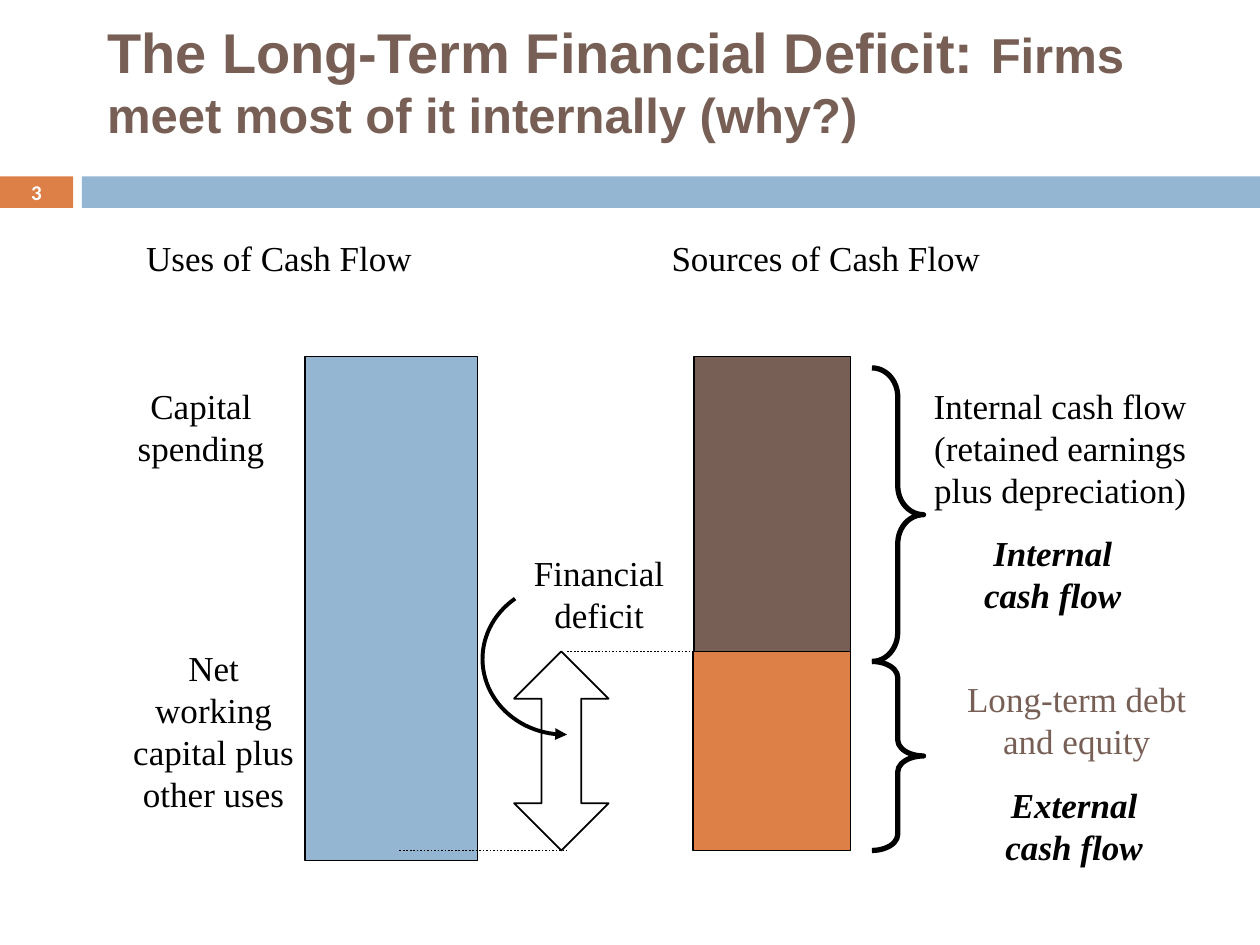
import math

import pptx
import pptx.dml.color
import pptx.enum.dml
import pptx.enum.shapes
import pptx.enum.text
import pptx.oxml
import pptx.oxml.ns
import pptx.util

Inches = pptx.util.Inches
Pt = pptx.util.Pt
SHAPES = pptx.enum.shapes.MSO_SHAPE
ANCHOR = pptx.enum.text.MSO_ANCHOR

COLORS = {"black": "000000", "white": "FFFFFF", "blue": "94B6D2",
          "orange": "DD8047", "brown": "775F55"}

# Content; boxes are left, top, width, height in inches
TITLE_RUNS = [("The Long-Term Financial Deficit: ", 32),
              ("Firms meet most of it internally (why?)", 28)]
HEADER_BARS = [((0, 1.4, 0.58, 0.25), "orange"), ((0.65, 1.4, 9.35, 0.25), "blue")]
CASH_BARS = [
    ((2.42, 2.83, 1.37, 4), "blue"),
    ((5.51, 2.83, 1.24, 2.41), "brown"),
    ((5.5, 5.17, 1.25, 1.58), "orange"),
]
BRACES = [((6.92, 2.92, 0.41, 2.33), 0.56), ((6.92, 5.25, 0.41, 1.5), 0.31)]
LABELS = [
    ("Uses of Cash Flow", (1, 1.83, 2.43, 0.44), "black"),
    ("Sources of Cash Flow", (5.17, 1.83, 2.77, 0.44), "black"),
    ("Capital spending", (0.92, 3, 1.35, 0.77), "black"),
    ("Net working capital plus other uses", (0.92, 5.08, 1.55, 1.45), "black"),
    ("Internal cash flow (retained earnings plus depreciation)",
     (7.25, 3, 2.33, 1.11), "black"),
    ("Long-term debt and equity", (7.42, 5.33, 2.25, 0.77), "brown"),
    ("Financial deficit", (4.08, 4.33, 1.35, 0.77), "black"),
]
EMPHASIZED_LABELS = [
    ("Internal cash flow", (7.58, 4.17, 1.55, 0.77), "black"),
    ("External cash flow", (7.75, 6.17, 1.55, 0.77), "black"),
]
DEFICIT_ARROW = (4.08, 5.17, 0.75, 1.58)
DOTTED_LINES = [(3.17, 4.5, 6.75), (4.5, 6, 5.17)]  # from x, to x, y
POINTER_CENTER, POINTER_RADII = (4.48, 5.23), (0.65, 0.6)
POINTER_ANGLES = (233, 90)  # degrees, clockwise from the right


def rgb(name):
    return pptx.dml.color.RGBColor.from_string(COLORS[name])


def inches(box):
    return [Inches(value) for value in box]


def style_font(font, name, size, color, bold=False, italic=False):
    font.name, font.size = name, Pt(size)
    font.bold, font.italic = bold, italic
    font.color.rgb = rgb(color)


def style_shape(shape, fill=None, line_width=None):
    shape.shadow.inherit = False
    if fill:
        shape.fill.solid()
        shape.fill.fore_color.rgb = rgb(fill)
    else:
        shape.fill.background()
    if line_width:
        shape.line.color.rgb = rgb("black")
        shape.line.width = Pt(line_width)
    else:
        shape.line.fill.background()


def add_shape(slide, kind, box, fill=None, line_width=None):
    shape = slide.shapes.add_shape(kind, *inches(box))
    style_shape(shape, fill, line_width)
    return shape


def add_text(slide, text, box):
    frame = slide.shapes.add_textbox(*inches(box)).text_frame
    frame.word_wrap = True
    paragraph = frame.paragraphs[0]
    paragraph.text = text
    paragraph.alignment = pptx.enum.text.PP_ALIGN.CENTER
    return frame, paragraph


def add_labels(slide, labels, emphasized=False):
    for text, box, color in labels:
        paragraph = add_text(slide, text, box)[1]
        style_font(paragraph.font, "Times New Roman", 20, color, emphasized, emphasized)


def add_title(slide):
    title = slide.shapes.title
    title.left, title.top, title.width, title.height = inches((0.75, 0.14, 8.33, 1.08))
    frame = title.text_frame
    frame.word_wrap = True
    frame.auto_size = pptx.enum.text.MSO_AUTO_SIZE.NONE
    frame.vertical_anchor = ANCHOR.TOP
    frame.margin_top = 0
    paragraph = frame.paragraphs[0]
    paragraph.alignment = pptx.enum.text.PP_ALIGN.LEFT
    for text, size in TITLE_RUNS:
        run = paragraph.add_run()
        run.text = text
        style_font(run.font, "Arial", size, "brown", bold=True)


def add_dotted_line(slide, start, end, y):
    line = slide.shapes.add_connector(
        pptx.enum.shapes.MSO_CONNECTOR.STRAIGHT, *inches((start, y, end, y)))
    line.line.color.rgb = rgb("black")
    line.line.width = Pt(1)
    line.line.dash_style = pptx.enum.dml.MSO_LINE.ROUND_DOT
    properties = line._element.spPr
    properties.append(pptx.oxml.parse_xml(
        "<a:effectLst %s/>" % pptx.oxml.ns.nsdecls("a")))


def add_pointer(slide, steps=40):
    first, last = POINTER_ANGLES
    points = []
    for step in range(steps + 1):
        angle = math.radians(first + (last - first) * step / steps)
        points.append((Inches(POINTER_CENTER[0] + POINTER_RADII[0] * math.cos(angle)),
                       Inches(POINTER_CENTER[1] + POINTER_RADII[1] * math.sin(angle))))
    points.append((Inches(4.5), points[-1][1]))
    builder = slide.shapes.build_freeform(*points[0])
    builder.add_line_segments(points[1:], close=False)
    pointer = builder.convert_to_shape()
    style_shape(pointer, line_width=2.25)
    pointer.line._get_or_add_ln().append(pptx.oxml.parse_xml(
        '<a:tailEnd type="triangle" %s/>' % pptx.oxml.ns.nsdecls("a")))


def main():
    presentation = pptx.Presentation()
    presentation.slide_width, presentation.slide_height = Inches(10), Inches(7.5)
    slide = presentation.slides.add_slide(presentation.slide_layouts[5])

    # Header band, title and slide number
    for box, color in HEADER_BARS:
        add_shape(slide, SHAPES.RECTANGLE, box, color)
    add_title(slide)
    frame, paragraph = add_text(slide, "3", (0, 1.39, 0.58, 0.27))
    frame.vertical_anchor = ANCHOR.MIDDLE
    frame.margin_top = frame.margin_bottom = 0
    style_font(paragraph.font, "Calibri", 12, "white", bold=True)

    # Cash flow bars, braces and labels
    for box, color in CASH_BARS:
        add_shape(slide, SHAPES.RECTANGLE, box, color, 1)
    for box, curl in BRACES:
        brace = add_shape(slide, SHAPES.RIGHT_BRACE, box, line_width=3)
        brace.adjustments[0] = curl
    add_labels(slide, LABELS)
    add_labels(slide, EMPHASIZED_LABELS, emphasized=True)

    # Financial deficit
    arrow = add_shape(slide, SHAPES.UP_DOWN_ARROW, DEFICIT_ARROW, "white", 1)
    arrow.adjustments[0], arrow.adjustments[1] = 0.5, 0.42
    for start, end, y in DOTTED_LINES:
        add_dotted_line(slide, start, end, y)
    add_pointer(slide)

    presentation.save("out.pptx")


if __name__ == "__main__":
    main()
